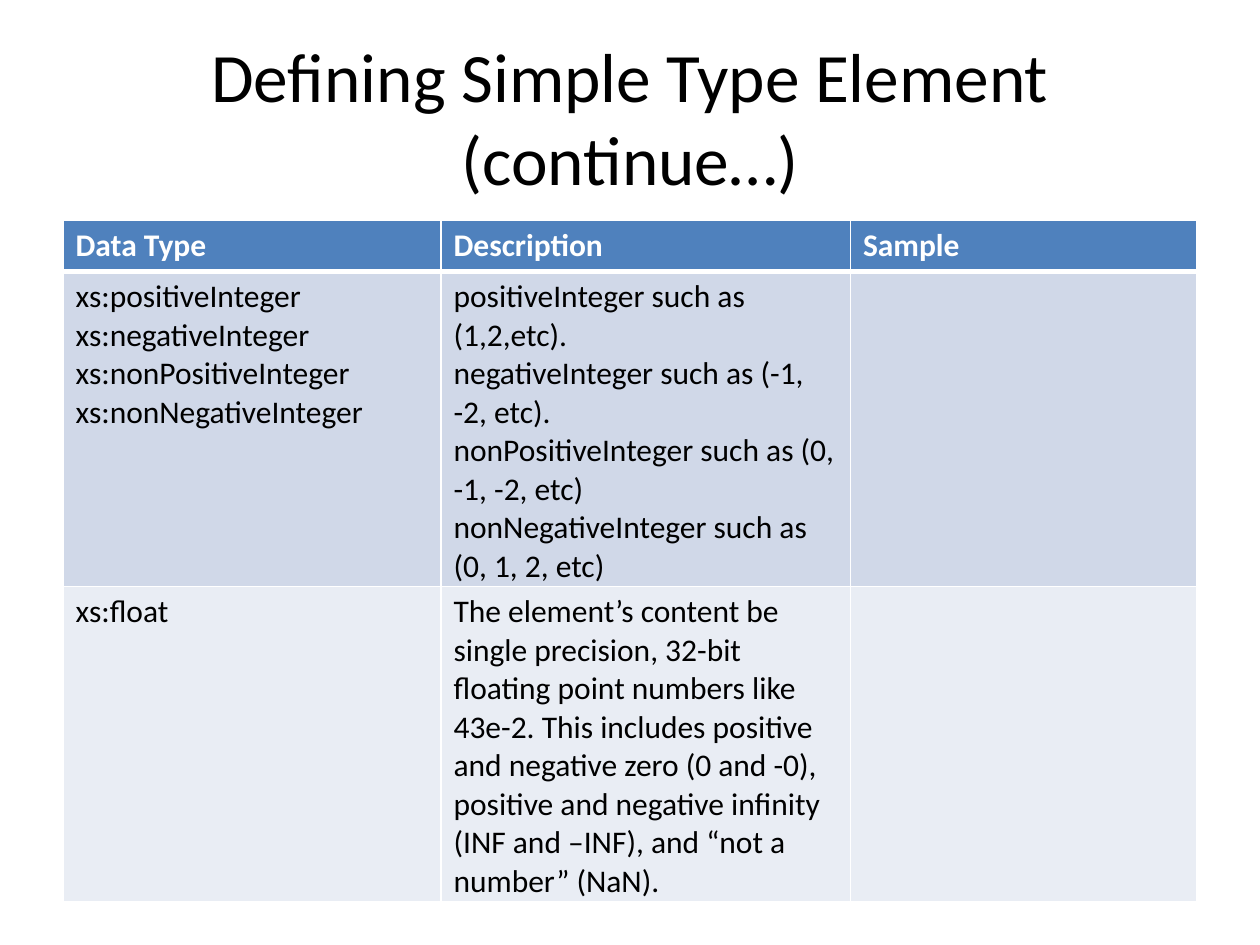
import pptx
import pptx.dml.color
import pptx.enum.text
import pptx.oxml
import pptx.oxml.ns
import pptx.util

Pt = pptx.util.Pt
ALIGN = pptx.enum.text.PP_ALIGN
ANCHOR = pptx.enum.text.MSO_ANCHOR

TITLE_FONT = {"name": "Calibri", "size": Pt(39.6), "bold": False}
HEADER_FONT = {"name": "Calibri", "size": Pt(18), "bold": True}
BODY_FONT = {**HEADER_FONT, "bold": False}

COLUMN_WIDTHS = [216, 234, 198]
ROW_HEIGHT = 29.2  # rows grow to fit their text
ROW_FILLS = ["4F81BD", "D0D8E8", "E9EDF4"]
DATA_TYPES = [
    ["Data Type", "Description", "Sample"],
    [
        "xs:positiveInteger\nxs:negativeInteger\n"
        "xs:nonPositiveInteger\nxs:nonNegativeInteger",
        "positiveInteger such as (1,2,etc).\n"
        "negativeInteger such as (-1, -2, etc).\n"
        "nonPositiveInteger such as (0, -1, -2, etc)\n"
        "nonNegativeInteger such as (0, 1, 2, etc)",
        "",
    ],
    [
        "xs:float",
        "The element’s content be single precision, 32-bit floating point "
        "numbers like 43e-2. This includes positive and negative zero "
        "(0 and -0), positive and negative infinity (INF and –INF), "
        "and “not a number” (NaN).",
        "",
    ],
]


def rgb(value):
    return pptx.dml.color.RGBColor.from_string(value)


def format_text(text_frame, font_values, color):
    for paragraph in text_frame.paragraphs:
        for attribute, value in font_values.items():
            setattr(paragraph.font, attribute, value)
        paragraph.font.color.rgb = rgb(color)
        for run in paragraph.runs:
            for attribute, value in font_values.items():
                setattr(run.font, attribute, value)
            run.font.color.rgb = rgb(color)


def set_borders(cell, color, widths):
    """Add cell borders; widths maps an edge tag to points."""
    properties = cell._tc.get_or_add_tcPr()
    for position, (edge, width) in enumerate(widths.items()):
        border = pptx.oxml.parse_xml(
            f'<a:{edge} {pptx.oxml.ns.nsdecls("a")} w="{Pt(width)}">'
            f'<a:solidFill><a:srgbClr val="{color}"/></a:solidFill></a:{edge}>'
        )
        properties.insert(position, border)


def add_title(slide, left, top, width, height):
    title = slide.shapes.add_textbox(Pt(left), Pt(top), Pt(width), Pt(height))
    frame = title.text_frame
    frame.word_wrap = True
    frame.vertical_anchor = ANCHOR.MIDDLE
    frame.text = "Defining Simple Type Element (continue…)"
    frame.paragraphs[0].alignment = ALIGN.CENTER
    format_text(frame, TITLE_FONT, "000000")


def add_data_types(slide, left, top, width, height):
    table_frame = slide.shapes.add_table(
        len(DATA_TYPES), len(COLUMN_WIDTHS), Pt(left), Pt(top), Pt(width), Pt(height)
    )
    table = table_frame.table
    for column, column_width in zip(table.columns, COLUMN_WIDTHS):
        column.width = Pt(column_width)

    for row_index, (texts, fill) in enumerate(zip(DATA_TYPES, ROW_FILLS)):
        is_header = row_index == 0
        table.rows[row_index].height = Pt(ROW_HEIGHT)
        # The heavy rule under the header belongs to both rows it separates
        widths = {
            "lnL": 1,
            "lnR": 1,
            "lnT": 3 if row_index == 1 else 1,
            "lnB": 3 if is_header else 1,
        }
        for column_index, text in enumerate(texts):
            cell = table.cell(row_index, column_index)
            cell.text = text
            cell.fill.solid()
            cell.fill.fore_color.rgb = rgb(fill)
            set_borders(cell, "FFFFFF", widths)
            format_text(
                cell.text_frame,
                HEADER_FONT if is_header else BODY_FONT,
                "FFFFFF" if is_header else "000000",
            )
    table_frame.height = Pt(height)


def main():
    presentation = pptx.Presentation()
    presentation.slide_width = Pt(720)
    presentation.slide_height = Pt(540)
    slide = presentation.slides.add_slide(presentation.slide_layouts[6])
    slide.background.fill.solid()
    slide.background.fill.fore_color.rgb = rgb("FFFFFF")

    add_title(slide, 36, 21.6, 648, 90)
    add_data_types(slide, 36, 126, 648, 389.5)
    presentation.save("out.pptx")


if __name__ == "__main__":
    main()
